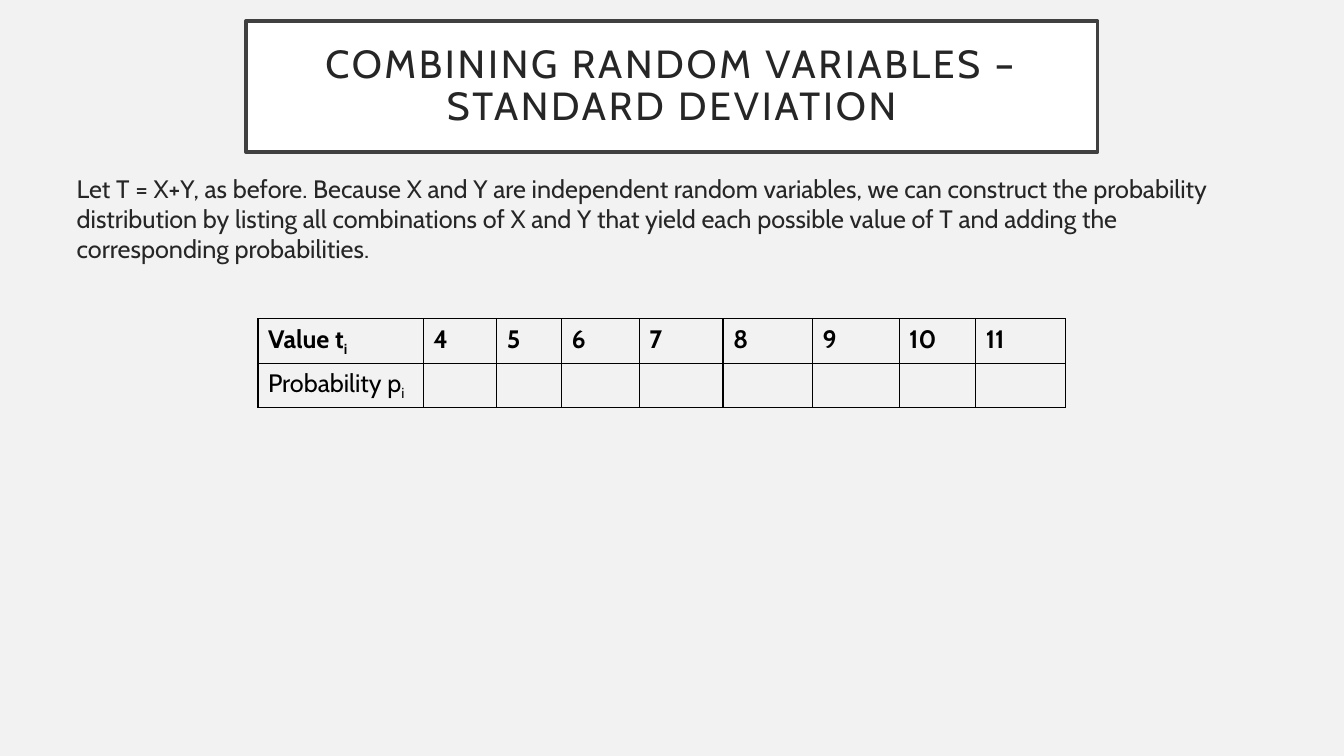
import pptx
import pptx.dml.color
import pptx.enum.text
import pptx.oxml
import pptx.oxml.ns
import pptx.util

Cm = pptx.util.Cm
Pt = pptx.util.Pt
COLORS = {"background": "F2F2F2", "panel": "FFFFFF", "frame": "404040",
          "text": "262626", "table": "000000"}
TITLE = "COMBINING RANDOM VARIABLES – STANDARD DEVIATION"
EXPLANATION = (
    "Let T = X+Y, as before. Because X and Y are independent random variables, "
    "we can construct the probability distribution by listing all combinations of "
    "X and Y that yield each possible value of T and adding the corresponding probabilities."
)
COLUMN_WIDTHS = [4.17, 1.85, 1.63, 1.96, 2.11, 2.26, 2.18, 1.93, 2.26]
ROW_HEIGHT = 1.04


def rgb(color):
    return pptx.dml.color.RGBColor.from_string(COLORS[color])


def add_text(paragraph, text, size=18, color="text", bold=False, spacing=None, baseline=None):
    run = paragraph.add_run()
    run.text = text
    run.font.name = "Cabin"
    run.font.size = Pt(size)
    run.font.bold = bold
    run.font.color.rgb = rgb(color)
    properties = run.font._element
    if spacing is not None:
        properties.set("spc", str(spacing * 100))
    if baseline is not None:
        properties.set("baseline", str(baseline * 1000))


class DistributionSlide:
    """Draw the elements of one slide in a shared style."""

    def __init__(self, presentation):
        self.slide = presentation.slides.add_slide(presentation.slide_layouts[1])
        fill = self.slide.background.fill
        fill.solid()
        fill.fore_color.rgb = rgb("background")

    def place(self, placeholder, left, top, width, height, anchor):
        placeholder.left, placeholder.top = Cm(left), Cm(top)
        placeholder.width, placeholder.height = Cm(width), Cm(height)
        frame = placeholder.text_frame
        frame.word_wrap = True
        frame.auto_size = pptx.enum.text.MSO_AUTO_SIZE.NONE
        frame.vertical_anchor = anchor
        paragraph = frame.paragraphs[0]
        paragraph.space_before = Pt(0)
        return frame, paragraph

    def title(self, text):
        heading = self.slide.shapes.title
        frame, paragraph = self.place(heading, 6.2, 0.53, 21.46, 3.3,
                                      pptx.enum.text.MSO_ANCHOR.MIDDLE)
        heading.fill.solid()
        heading.fill.fore_color.rgb = rgb("panel")
        heading.line.color.rgb = rgb("frame")
        heading.line.width = Pt(2.5)
        frame.margin_left = frame.margin_right = Cm(0.5)
        frame.margin_top = frame.margin_bottom = Cm(0.5)
        paragraph.alignment = pptx.enum.text.PP_ALIGN.CENTER
        paragraph.line_spacing = 0.9
        add_text(paragraph, text, size=28, spacing=2)

    def body(self, text):
        _, paragraph = self.place(self.slide.placeholders[1], 1.68, 4.24, 30, 11.71,
                                  pptx.enum.text.MSO_ANCHOR.TOP)
        properties = paragraph._p.get_or_add_pPr()
        properties.set("marL", "0")
        properties.set("indent", "0")
        pptx.oxml.ns.qn("a:buNone")
        properties.append(pptx.oxml.parse_xml(
            f'<a:buNone {pptx.oxml.ns.nsdecls("a")}/>'))
        add_text(paragraph, text)

    def border(self, cell):
        properties = cell._tc.get_or_add_tcPr()
        for side in "LRTB":
            properties.append(pptx.oxml.parse_xml(
                f'<a:ln{side} {pptx.oxml.ns.nsdecls("a")} w="{Pt(1)}"><a:solidFill>'
                f'<a:srgbClr val="{COLORS["table"]}"/></a:solidFill></a:ln{side}>'))

    def table(self, values):
        labels = [("Value t", True), ("Probability p", False)]
        grid = self.slide.shapes.add_table(
            len(labels), len(COLUMN_WIDTHS), Cm(6.5), Cm(8.03),
            Cm(sum(COLUMN_WIDTHS)), Cm(ROW_HEIGHT * len(labels))).table
        grid.first_row = grid.horz_banding = False
        for column, width in zip(grid.columns, COLUMN_WIDTHS):
            column.width = Cm(width)
        for row in grid.rows:
            row.height = Cm(ROW_HEIGHT)
        for cell in grid.iter_cells():
            self.border(cell)
            cell.fill.background()
        for row, (label, bold) in enumerate(labels):
            paragraph = grid.cell(row, 0).text_frame.paragraphs[0]
            add_text(paragraph, label, color="table", bold=bold)
            add_text(paragraph, "i", color="table", bold=bold, baseline=-25)
        for column, value in enumerate(values, start=1):
            add_text(grid.cell(0, column).text_frame.paragraphs[0], str(value),
                     color="table", bold=True)


def main():
    presentation = pptx.Presentation()
    presentation.slide_width, presentation.slide_height = Cm(33.87), Cm(19.05)
    distribution = DistributionSlide(presentation)
    distribution.title(TITLE)
    distribution.body(EXPLANATION)
    distribution.table(range(4, 12))
    presentation.save("out.pptx")


if __name__ == "__main__":
    main()
